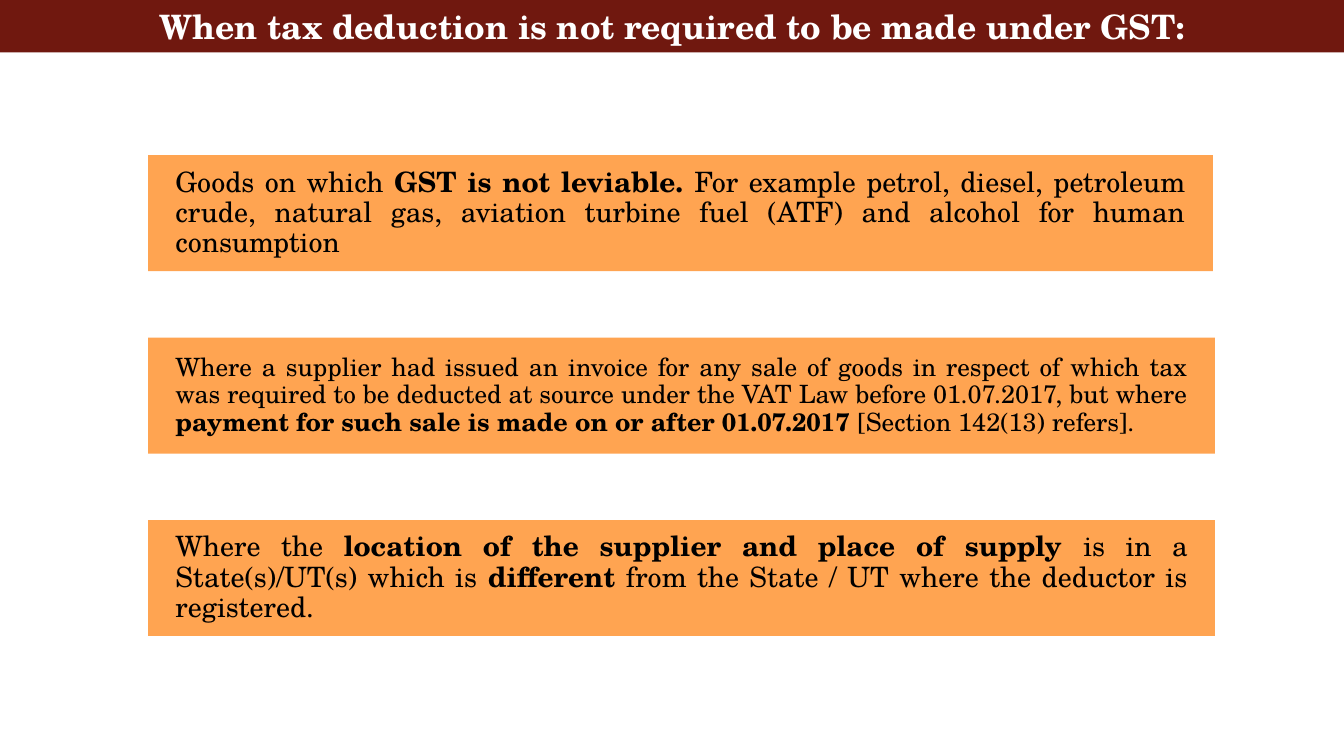
import pptx
import pptx.util
from pptx.dml.color import RGBColor
from pptx.enum.shapes import MSO_SHAPE
from pptx.enum.text import MSO_ANCHOR, PP_ALIGN

PX = 9144  # EMU per px, 100 px to the inch
SLIDE_WIDTH, SLIDE_HEIGHT = 1333, 750
FONT = "TeX Gyre Schola"
MAROON = RGBColor(0x70, 0x18, 0x0F)
ORANGE = RGBColor(0xFF, 0xA4, 0x51)
BLACK = RGBColor(0, 0, 0)
WHITE = RGBColor(0xFF, 0xFF, 0xFF)

TITLE = "When tax deduction is not required to be made under GST:"
# Each case: width, text size, and runs as (text, bold)
CASES = [
    (1056, 20, [
        ("Goods on which ", False),
        ("GST is not leviable. ", True),
        ("For example petrol, diesel, petroleum crude, natural gas, aviation "
         "turbine fuel (ATF) and alcohol for human consumption", False),
    ]),
    (1058, 18, [
        ("Where a supplier had issued an invoice for any sale of goods in "
         "respect of which tax was required to be deducted at source under "
         "the VAT Law before 01.07.2017, but where ", False),
        ("payment for such sale is made on or after 01.07.2017 ", True),
        ("[Section 142(13) refers].", False),
    ]),
    (1058, 20, [
        ("Where the ", False),
        ("location of the supplier and place of supply ", True),
        ("is in a State(s)/UT(s) which is ", False),
        ("different", True),
        (" from the State / UT where the deductor is registered.", False),
    ]),
]


def add_panel(slide, box, fill, margins, anchor):
    """Add a filled rectangle and return its text frame; margins are (x, y)."""
    shape = slide.shapes.add_shape(MSO_SHAPE.RECTANGLE, *(n * PX for n in box))
    shape.shadow.inherit = False
    shape.fill.solid()
    shape.fill.fore_color.rgb = fill
    shape.line.fill.background()
    frame = shape.text_frame
    frame.word_wrap = True
    frame.vertical_anchor = anchor
    frame.margin_left = frame.margin_right = margins[0] * PX
    frame.margin_top = frame.margin_bottom = margins[1] * PX
    return frame


def add_runs(paragraph, runs, size, color):
    for text, bold in runs:
        run = paragraph.add_run()
        run.text = text
        run.font.name = FONT
        run.font.size = pptx.util.Pt(size)
        run.font.bold = bold
        run.font.color.rgb = color


def add_title_bar(slide, box):
    frame = add_panel(slide, box, MAROON, (0, 6), MSO_ANCHOR.TOP)
    paragraph = frame.paragraphs[0]
    paragraph.alignment = PP_ALIGN.CENTER
    add_runs(paragraph, [(TITLE, True)], 24, WHITE)


def add_cases(slide, left, top, height, pitch):
    for index, (width, size, runs) in enumerate(CASES):
        box = (left, top + index * pitch, width, height)
        frame = add_panel(slide, box, ORANGE, (27, 27), MSO_ANCHOR.MIDDLE)
        paragraph = frame.paragraphs[0]
        paragraph.alignment = PP_ALIGN.JUSTIFY
        paragraph.line_spacing = 0.9
        add_runs(paragraph, runs, size, BLACK)


def main():
    presentation = pptx.Presentation()
    presentation.slide_width = SLIDE_WIDTH * PX
    presentation.slide_height = SLIDE_HEIGHT * PX
    slide = presentation.slides.add_slide(presentation.slide_layouts[6])
    add_cases(slide, left=147, top=154, height=115, pitch=181)
    add_title_bar(slide, (0, 0, SLIDE_WIDTH, 52))
    presentation.save("out.pptx")


if __name__ == "__main__":
    main()
